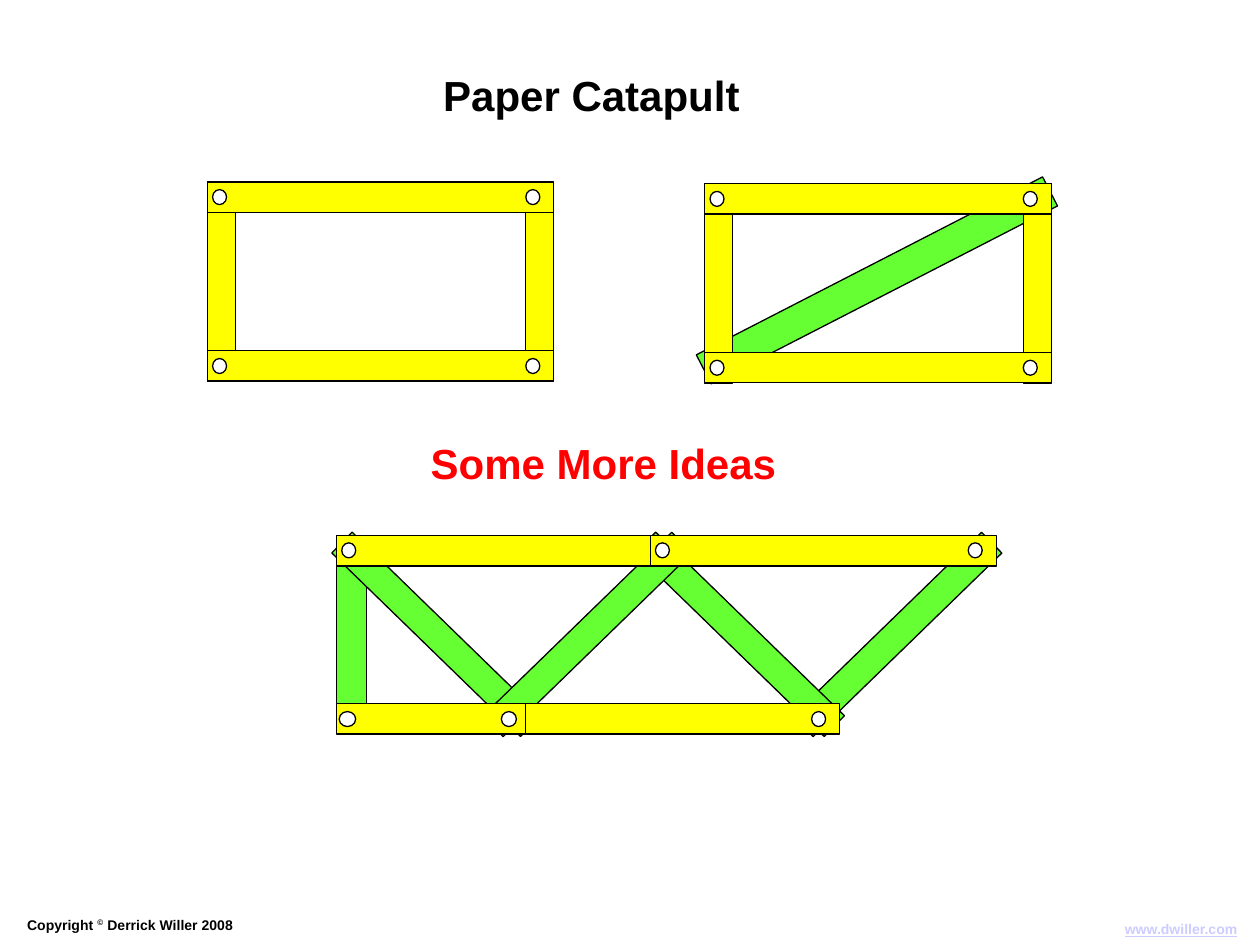
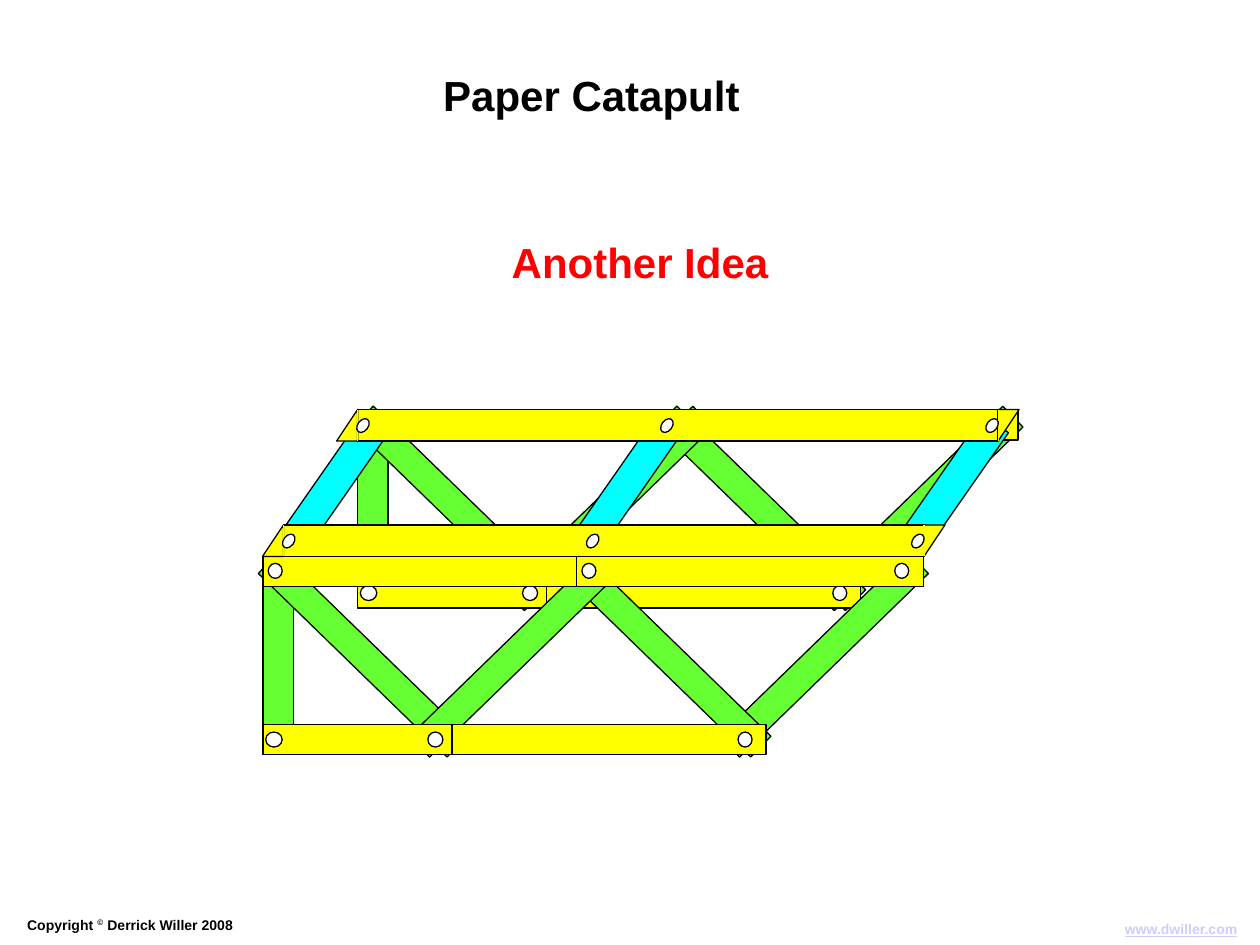
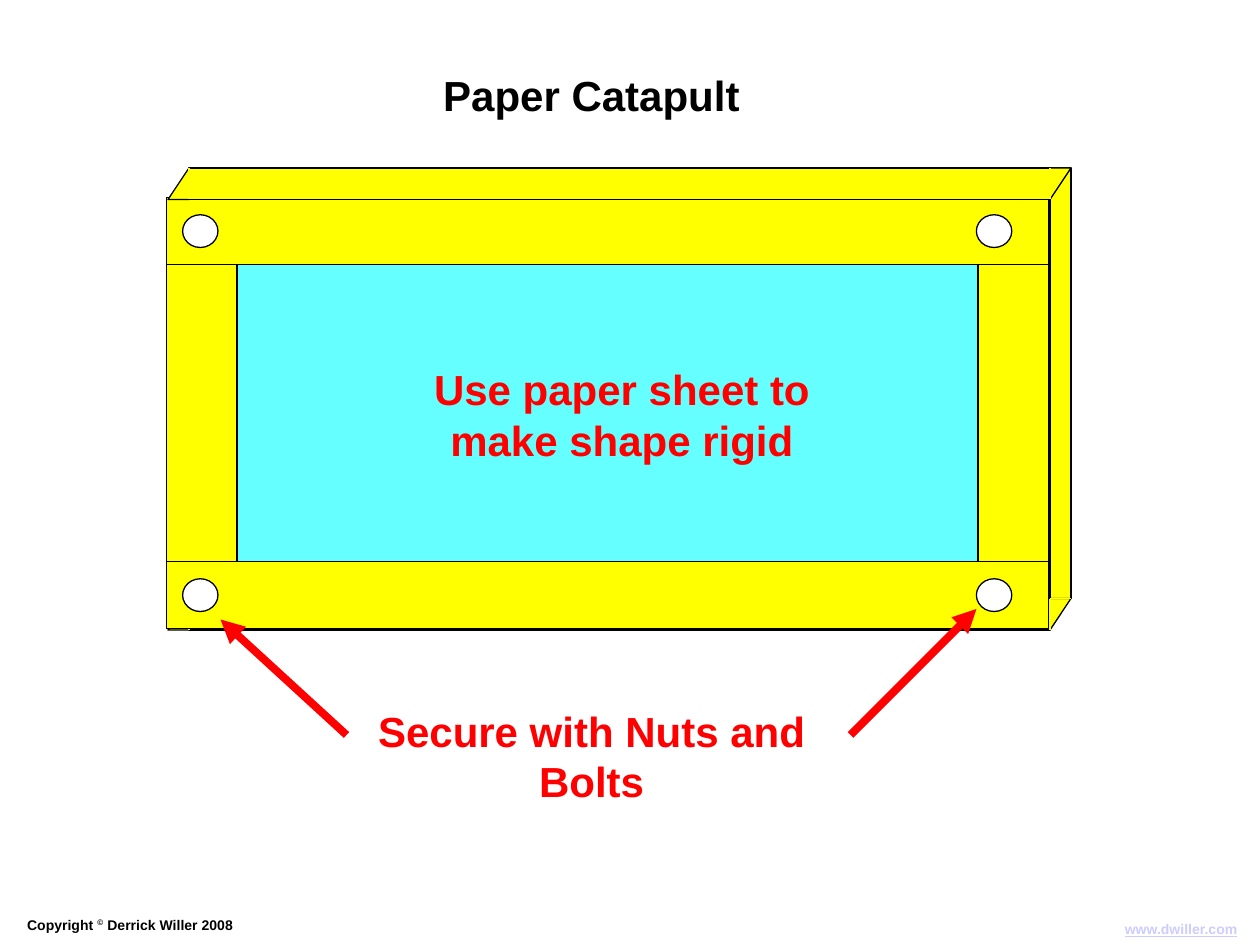
from collections import namedtuple

from pptx import Presentation
from pptx.dml.color import RGBColor
from pptx.enum.shapes import MSO_CONNECTOR as Connector, MSO_SHAPE as Shape
from pptx.enum.text import MSO_ANCHOR as Anchor, MSO_AUTO_SIZE as AutoSize, PP_ALIGN as Align
from pptx.oxml.ns import qn
from pptx.util import Pt
from lxml.etree import SubElement

COLOURS = {
    "black": "000000",
    "white": "FFFFFF",
    "red": "FF0000",
    "yellow": "FFFF00",
    "green": "66FF33",
    "cyan": "00FFFF",
    "sheet": "66FFFF",
    "link": "CCCCFF",
}
FONT = "Arial"
THIN = 0.75

# Strips of the small frames and trusses
STRIP = 17.3
STRIP_LENGTH = 198
SMALL_BOLT = (8, 8.6)

# Perspective strips
LID_HEIGHT = 18
LID_SLANT = 12

FrameSize = namedtuple(
    "FrameSize", "length post_width post_height bar_height drop bolt_inset bolt_span bolt"
)
SMALL_FRAME = FrameSize(STRIP_LENGTH, 16, 114, STRIP, 96.5, 7, 179, SMALL_BOLT)
LARGE_FRAME = FrameSize(504, 40.3, 246, 38.2, 208, 19.2, 453.6, (20.2, 18.7))


def colour(name):
    return RGBColor.from_string(COLOURS[name])


# Basic elements

def add_piece(slide, kind, left, top, width, height, fill, rotation=0, flip=None, outlined=True):
    shape = slide.shapes.add_shape(kind, Pt(left), Pt(top), Pt(width), Pt(height))
    shape.shadow.inherit = False
    shape.fill.solid()
    shape.fill.fore_color.rgb = colour(fill)
    if outlined:
        shape.line.color.rgb = colour("black")
        shape.line.width = Pt(THIN)
    else:
        shape.line.fill.background()
    shape.rotation = rotation
    if flip:
        shape.element.spPr.get_or_add_xfrm().set(flip, "1")


def add_bar(slide, left, top, width, height, fill="yellow"):
    add_piece(slide, Shape.RECTANGLE, left, top, width, height, fill)


def add_brace(slide, center_x, center_y, width, height, fill, rotation):
    add_piece(slide, Shape.RECTANGLE, center_x - width / 2, center_y - height / 2,
              width, height, fill, rotation)


def add_bolt(slide, center_x, center_y, size=SMALL_BOLT, rotation=0):
    width, height = size
    add_piece(slide, Shape.OVAL, center_x - width / 2, center_y - height / 2,
              width, height, "white", rotation)


def add_line(slide, start, end, name, width=THIN, arrow=False):
    connector = slide.shapes.add_connector(
        Connector.STRAIGHT, *(Pt(value) for value in start + end))
    connector.line.color.rgb = colour(name)
    connector.line.width = Pt(width)
    properties = connector.element.spPr
    if arrow:
        SubElement(properties.find(qn("a:ln")), qn("a:tailEnd"), type="triangle")
    SubElement(properties, qn("a:effectLst"))


def add_text(slide, left, top, width, height, lines, size=24, name="black",
             align=Align.LEFT, anchor=Anchor.TOP, wrap=False):
    """Each line is a list of run texts; returns the runs in order."""
    frame = slide.shapes.add_textbox(Pt(left), Pt(top), Pt(width), Pt(height)).text_frame
    frame.word_wrap = wrap
    frame.auto_size = AutoSize.SHAPE_TO_FIT_TEXT
    frame.vertical_anchor = anchor
    runs = []
    for index, line in enumerate(lines):
        paragraph = frame.add_paragraph() if index else frame.paragraphs[0]
        paragraph.alignment = align
        for text in line:
            run = paragraph.add_run()
            run.text = text
            run.font.name = FONT
            run.font.size = Pt(size)
            run.font.bold = True
            run.font.color.rgb = colour(name)
            runs.append(run)
    return runs


def add_heading(slide, left, top, width, height, *lines):
    add_text(slide, left, top, width, height, [[line] for line in lines],
             name="red", align=Align.CENTER, anchor=Anchor.MIDDLE)


# Parts of the catapult

def add_frame(slide, left, top, size):
    """Two posts under two bars, with a bolt at each corner."""
    for post_left in (left, left + size.length - size.post_width):
        add_bar(slide, post_left, top, size.post_width, size.post_height)
    for bar_top in (top, top + size.drop):
        add_bar(slide, left, bar_top, size.length, size.bar_height)
        for bolt_x in (left + size.bolt_inset, left + size.bolt_inset + size.bolt_span):
            add_bolt(slide, bolt_x, bar_top + size.bar_height / 2, size.bolt)


def add_truss(slide, left, top, top_bolts=(7, 186.25, 365)):
    """A post and four diagonals held between two rows of strips."""
    bottom = top + 96
    rising, falling = 225.8, 134.2

    def add_diagonal(offset, rotation):
        add_brace(slide, left + offset, top + 56.3, 16.6, 150.5, "green", rotation)

    add_diagonal(320.5, rising)
    add_bar(slide, left, top, STRIP, 108, "green")
    for offset, rotation in ((230.5, falling), (57, falling), (143.4, rising)):
        add_diagonal(offset, rotation)

    # Strips, the short one overlapping the long one below
    add_bar(slide, left, top, STRIP_LENGTH, STRIP)
    add_bar(slide, left + 89.5, bottom, STRIP_LENGTH, STRIP)
    add_bar(slide, left, bottom, 108, STRIP)
    add_bar(slide, left + 179.3, top, STRIP_LENGTH, STRIP)

    for offset in top_bolts:
        add_bolt(slide, left + offset, top + 8.3)
    for offset, width in ((6.25, 9.4), (98.5, 8.6), (275.5, 8)):
        add_bolt(slide, left + offset, bottom + 8.7, (width, 8.6))


def add_lid(slide, left, top, length, bolts=()):
    """A strip seen from above: a bar with slanted ends and hidden seams."""
    right = left + length
    add_bar(slide, left, top, length, LID_HEIGHT)
    for end_left, flip in ((left - LID_SLANT, "flipH"), (right, "flipV")):
        add_piece(slide, Shape.RIGHT_TRIANGLE, end_left, top, LID_SLANT, LID_HEIGHT,
                  "yellow", flip=flip)
    for seam in (left, right):
        add_line(slide, (seam, top), (seam, top + LID_HEIGHT), "yellow")
    for offset in bolts:
        add_bolt(slide, left + offset, top + 9.2, (6, 8.8), 37)


# Slides

def new_slide(presentation):
    """A blank slide with the shared title and footers."""
    slide = presentation.slides.add_slide(presentation.slide_layouts[6])
    add_text(slide, 246.2, 36, 183.6, 36, [["Paper Catapult"]])
    runs = add_text(slide, 8.4, 520, 407, 17, [["Copyright ", "©", " Derrick Willer 2008"]],
                    size=8, wrap=True)
    runs[1].font._element.set("baseline", "30000")
    address, = add_text(slide, 617.8, 522.7, 96.5, 17, [["www.dwiller.com"]],
                        size=8, name="link", align=Align.RIGHT, wrap=True)
    address.font.underline = True
    return slide


def build_frames_and_truss(presentation):
    slide = new_slide(presentation)
    add_frame(slide, 118.5, 104, SMALL_FRAME)
    add_brace(slide, 501.1, 160.2, 18.7, 222.5, "green", 242.8)
    add_frame(slide, 402.75, 105, SMALL_FRAME)
    add_truss(slide, 192.3, 306.2)
    add_heading(slide, 239, 246.2, 211.7, 36, "Some More Ideas")


def build_double_truss(presentation):
    slide = new_slide(presentation)
    lid_length, lid_bolts = 366, (3, 176.7, 362.5)

    # Rear side and cross braces
    add_truss(slide, 204.4, 234.2, top_bolts=(365,))
    for center_x in (189, 356.8, 543.2):
        add_brace(slide, center_x, 279, 90, 18, "cyan", 304.9)
    add_lid(slide, 204.4, 234, lid_length, lid_bolts)

    # Front side
    add_truss(slide, 150.3, 317.9)
    add_lid(slide, 162, 300, lid_length, lid_bolts)
    add_heading(slide, 285.1, 131.8, 161.3, 36, "Another Idea")


def build_rigid_frame(presentation):
    slide = new_slide(presentation)
    left, right, top, bottom, lid_length = 108, 600, 96, 342, 492

    # Paper sheet, depth and frame
    add_piece(slide, Shape.RECTANGLE, 126, 138, 444, 192, "sheet", outlined=False)
    add_bar(slide, right, top, LID_SLANT, bottom - top)
    add_lid(slide, left, bottom, lid_length)
    add_frame(slide, 95.25, 113, LARGE_FRAME)

    # Bolt callout
    add_heading(slide, 175.7, 414, 324.7, 36, "Secure with Nuts and Bolts")
    for start, end in (((198, 420), (126, 354)), ((486, 420), (558, 348))):
        add_line(slide, start, end, "red", 4.5, arrow=True)

    add_lid(slide, left, top, lid_length)
    add_line(slide, (right, bottom), (right + LID_SLANT, bottom), "yellow")
    add_heading(slide, 239.8, 203.8, 231.1, 65.5, "Use paper sheet to", "make shape rigid")


def main():
    presentation = Presentation()
    presentation.slide_width = Pt(720)
    presentation.slide_height = Pt(540)
    build_frames_and_truss(presentation)
    build_double_truss(presentation)
    build_rigid_frame(presentation)
    presentation.save("out.pptx")


if __name__ == "__main__":
    main()
